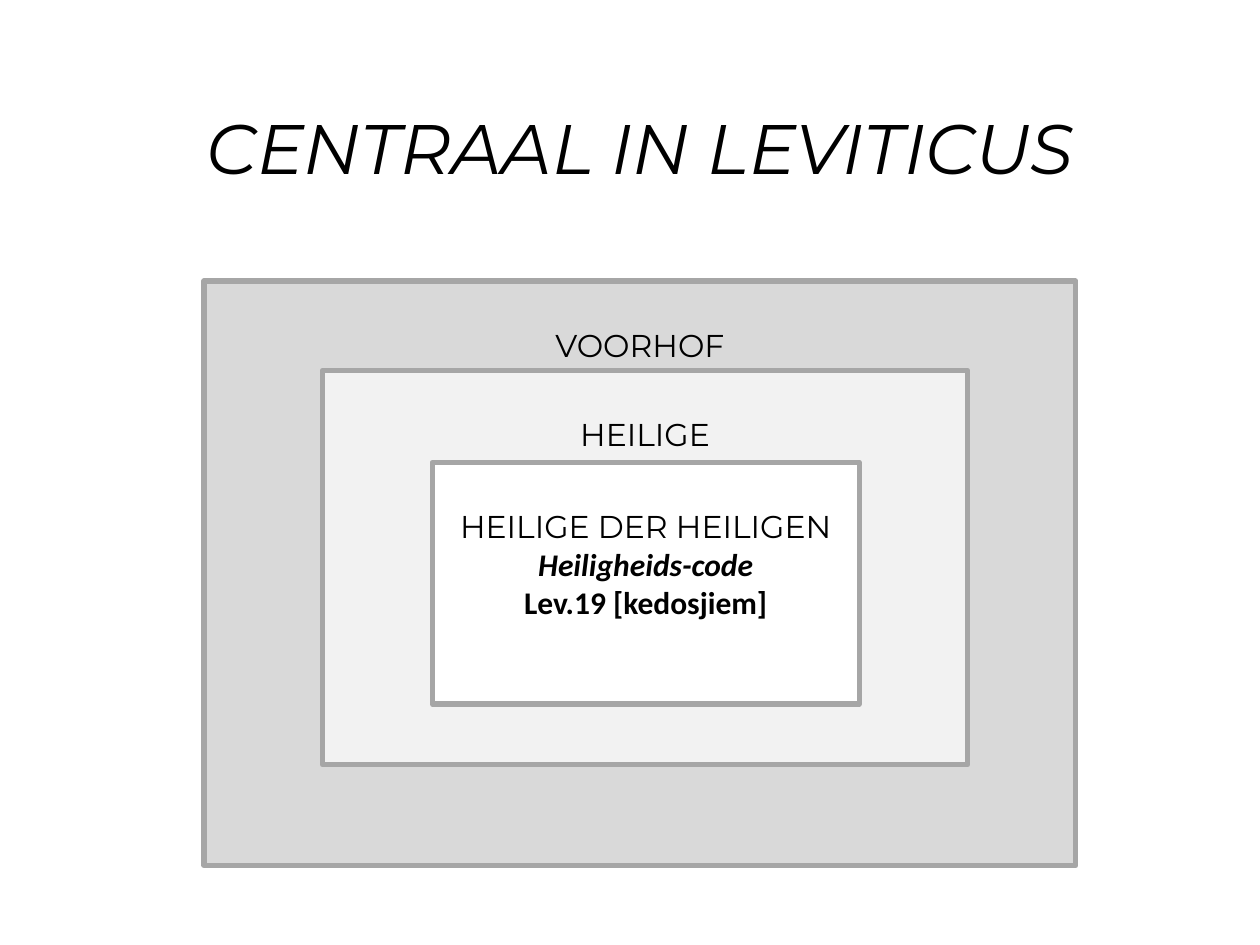
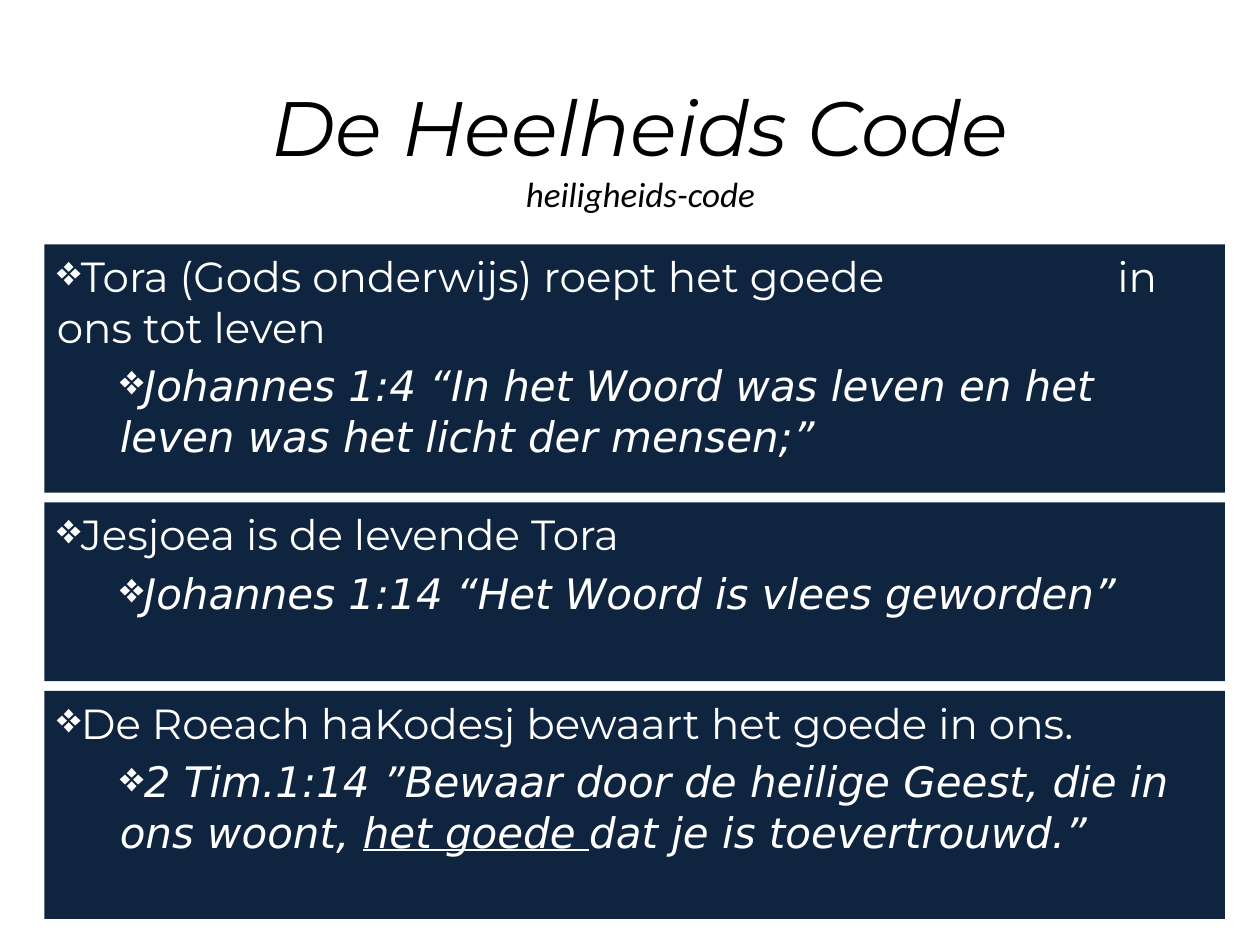
from lxml import etree
from pptx import Presentation
from pptx.dml.color import RGBColor
from pptx.enum.shapes import MSO_SHAPE
from pptx.enum.text import MSO_ANCHOR, PP_ALIGN
from pptx.oxml.ns import qn
from pptx.util import Pt

RECTANGLE = MSO_SHAPE.RECTANGLE
TOP, MIDDLE = MSO_ANCHOR.TOP, MSO_ANCHOR.MIDDLE
LEFT, CENTER = PP_ALIGN.LEFT, PP_ALIGN.CENTER

BLACK, WHITE, NAVY, BORDER = "000000", "FFFFFF", "0F243E", "A6A6A6"
HEADING, BODY, QUOTE = "Montserrat", "Calibri", "DejaVu Sans"


def color(hex_code):
    """Return the colour for a hex string."""
    return RGBColor.from_string(hex_code)


class Deck:
    """Holds the shared style and the current slide."""

    def __init__(self):
        """Start an empty presentation of 10 by 7.5 inches."""
        self.presentation = Presentation()
        self.presentation.slide_width = Pt(720)
        self.presentation.slide_height = Pt(540)
        self.slide = None

    def new_slide(self):
        """Add a blank slide and make it current."""
        layout = self.presentation.slide_layouts[6]
        self.slide = self.presentation.slides.add_slide(layout)

    def frame(self, shape, anchor, top_inset=3.6):
        """Prepare the text frame of a shape."""
        frame = shape.text_frame
        frame.word_wrap = True
        frame.vertical_anchor = anchor
        frame.margin_left = frame.margin_right = Pt(7.2)
        frame.margin_top, frame.margin_bottom = Pt(top_inset), Pt(3.6)
        return frame

    def paragraph(self, frame, index, parts, align, size, font, ink,
                  bold=False, italic=False):
        """Write one paragraph, underlining every second part."""
        paragraph = frame.add_paragraph() if index else frame.paragraphs[0]
        paragraph.alignment = align
        for number, part in enumerate(parts):
            run = paragraph.add_run()
            run.text = part
            run.font.size, run.font.name = Pt(size), font
            run.font.bold, run.font.italic = bold, italic
            run.font.underline = number % 2 == 1
            run.font.color.rgb = color(ink)
        return paragraph

    def title(self, *lines):
        """Add the centred italic title from (text, size, font) lines."""
        box = self.slide.shapes.add_textbox(Pt(60), Pt(26), Pt(612), Pt(116))
        frame = self.frame(box, MIDDLE)
        for index, (text, size, font) in enumerate(lines):
            self.paragraph(frame, index, [text], CENTER, size, font, BLACK,
                           italic=True)

    def rectangle(self, left, top, width, height, fill, border=None):
        """Add a filled rectangle with an optional border."""
        shape = self.slide.shapes.add_shape(
            RECTANGLE, Pt(left), Pt(top), Pt(width), Pt(height))
        shape.shadow.inherit = False
        shape.fill.solid()
        shape.fill.fore_color.rgb = color(fill)
        if border:
            shape.line.color.rgb = color(border)
            shape.line.width = Pt(3)
        else:
            shape.line.fill.background()
        return shape

    def court(self, area, fill, lines):
        """Add one nested court with its (text, font, bold, italic) lines."""
        frame = self.frame(self.rectangle(*area, fill, BORDER), TOP, 25.6)
        for index, (text, font, bold, italic) in enumerate(lines):
            self.paragraph(frame, index, [text], CENTER, 18, font, BLACK,
                           bold, italic)

    def bullet(self, paragraph, level, tab=None):
        """Give a paragraph its diamond bullet, indent and tab stop."""
        paragraph.level = level
        properties = paragraph._p.get_or_add_pPr()
        properties.set("marL", str(Pt(36 * level)))
        properties.set("indent", "0")
        if level:
            paragraph.space_before = Pt(4.8)
        etree.SubElement(properties, qn("a:buChar"), char="❖")
        if tab:
            stops = etree.SubElement(properties, qn("a:tabLst"))
            etree.SubElement(stops, qn("a:tab"), pos=str(Pt(tab)), algn="l")

    def band(self, top, height, statement, quote):
        """Add a navy band with a statement and its scripture quote."""
        shape = self.rectangle(25.4, top, 674.6, height, NAVY)
        frame = self.frame(shape, TOP)
        heading = self.paragraph(frame, 0, [statement], LEFT, 24, HEADING,
                                 WHITE)
        self.bullet(heading, 0, 606 if "\t" in statement else None)
        verse = self.paragraph(frame, 1, quote, LEFT, 24, QUOTE, WHITE,
                               italic=True)
        self.bullet(verse, 1)


def main():
    """Build both slides and save them."""
    deck = Deck()

    deck.new_slide()
    deck.title(("CENTRAAL IN LEVITICUS", 40, HEADING))
    courts = [
        ((116.6, 160.6, 498.2, 334), "D9D9D9",
         [("VOORHOF", HEADING, False, False)]),
        ((184.3, 211.7, 368.6, 225.4), "F2F2F2",
         [("HEILIGE", HEADING, False, False)]),
        ((247, 264.2, 244, 138.2), WHITE,
         [("HEILIGE DER HEILIGEN", HEADING, False, False),
          ("Heiligheids-code", BODY, True, True),
          ("Lev.19 [kedosjiem]", BODY, True, False)]),
    ]
    for area, fill, lines in courts:
        deck.court(area, fill, lines)

    deck.new_slide()
    deck.title(("De Heelheids Code", 44, HEADING),
               ("heiligheids-code", 20, BODY))
    teachings = [
        (141.9, "Tora (Gods onderwijs) roept het goede\tin ons tot leven",
         ["Johannes 1:4 “In het Woord was leven en het leven was het licht "
          "der mensen;”"]),
        (102.2, "Jesjoea is de levende Tora",
         ["Johannes 1:14 “Het Woord is vlees geworden”"]),
        (130.3, "De Roeach haKodesj bewaart het goede in ons.",
         ["2 Tim.1:14 ”Bewaar door de heilige Geest, die in ons woont, ",
          "het goede ", "dat je is toevertrouwd.”"]),
    ]
    top, gap = 139.7, 5.5
    for height, statement, quote in teachings:
        deck.band(top, height, statement, quote)
        top += height + gap

    deck.presentation.save("out.pptx")


if __name__ == "__main__":
    main()
